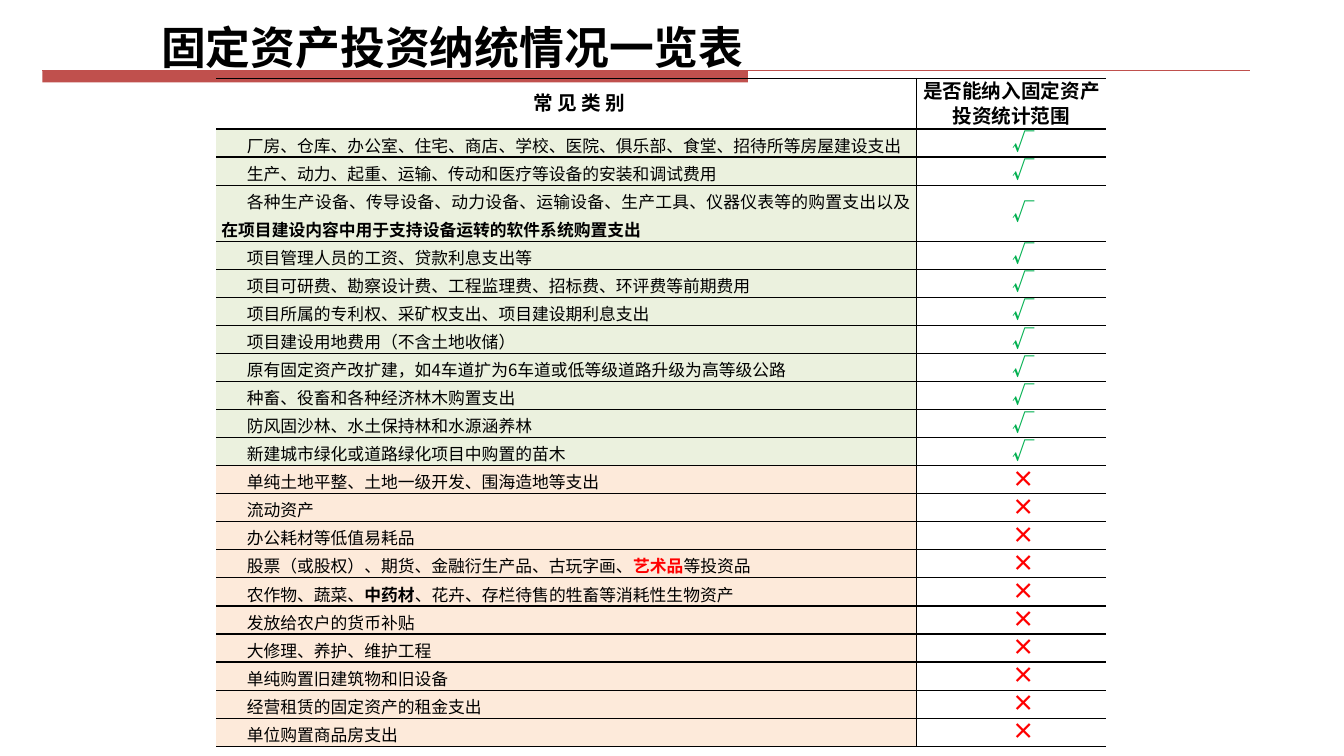
from pptx import Presentation
from pptx.dml.color import RGBColor
from pptx.enum.shapes import MSO_CONNECTOR, MSO_SHAPE
from pptx.enum.text import MSO_ANCHOR, PP_ALIGN
from pptx.util import Cm, Pt
from lxml.etree import SubElement
from pptx.oxml.ns import qn

FACE = "Noto Sans CJK SC"
BLACK = RGBColor(0x00, 0x00, 0x00)
BRICK = RGBColor(0xC0, 0x50, 0x4D)
GREEN = RGBColor(0x00, 0xB0, 0x50)
RED = RGBColor(0xFF, 0x00, 0x00)
LEAF = RGBColor(0xEB, 0xF1, 0xDE)
PEACH = RGBColor(0xFD, 0xEA, 0xDA)

YES = [
    ["厂房、仓库、办公室、住宅、商店、学校、医院、俱乐部、食堂、招待所等房屋建设支出"],
    ["生产、动力、起重、运输、传动和医疗等设备的安装和调试费用"],
    ["各种生产设备、传导设备、动力设备、运输设备、生产工具、仪器仪表等的购置支出以及",
     "在项目建设内容中用于支持设备运转的软件系统购置支出"],
    ["项目管理人员的工资、贷款利息支出等"],
    ["项目可研费、勘察设计费、工程监理费、招标费、环评费等前期费用"],
    ["项目所属的专利权、采矿权支出、项目建设期利息支出"],
    ["项目建设用地费用（不含土地收储）"],
    ["原有固定资产改扩建，如4车道扩为6车道或低等级道路升级为高等级公路"],
    ["种畜、役畜和各种经济林木购置支出"],
    ["防风固沙林、水土保持林和水源涵养林"],
    ["新建城市绿化或道路绿化项目中购置的苗木"],
]
NO = [
    ["单纯土地平整、土地一级开发、围海造地等支出"],
    ["流动资产"],
    ["办公耗材等低值易耗品"],
    ["股票（或股权）、期货、金融衍生产品、古玩字画、", "艺术品", "等投资品"],
    ["农作物、蔬菜、", "中药材", "、花卉、存栏待售的牲畜等消耗性生物资产"],
    ["发放给农户的货币补贴"],
    ["大修理、养护、维护工程"],
    ["单纯购置旧建筑物和旧设备"],
    ["经营租赁的固定资产的租金支出"],
    ["单位购置商品房支出"],
]


def write(para, parts, size, color, bold):
    font = para.font
    font.size, font.name = Pt(size), FACE
    font.color.rgb = color
    if len(parts) == 1:
        font.bold = bold
    SubElement(para._p.pPr.find(qn("a:defRPr")), qn("a:ea"), typeface=FACE)
    for i, part in enumerate(parts):
        run = para.add_run()
        run.text = part
        if len(parts) > 1:
            run.font.bold = i == 1
        if part == "艺术品":
            run.font.color.rgb = RED


def fill_cell(cell, parts, size, color, bold, align, space, indent, tint):
    cell.margin_left = cell.margin_right = Cm(0.13)
    cell.margin_top = cell.margin_bottom = 0
    props = cell._tc.get_or_add_tcPr()
    for side in ("lnL", "lnR", "lnT", "lnB"):
        edge = SubElement(props, qn("a:" + side), w=str(Pt(1)))
        if side == ("lnR" if align == PP_ALIGN.CENTER and not indent else ""):
            SubElement(edge, qn("a:noFill"))
        elif side == outer:
            SubElement(edge, qn("a:noFill"))
        else:
            ink = SubElement(edge, qn("a:solidFill"))
            SubElement(ink, qn("a:srgbClr"), val=str(BLACK))
    if tint:
        cell.fill.solid()
        cell.fill.fore_color.rgb = tint
    else:
        cell.fill.background()
    para = cell.text_frame.paragraphs[0]
    para.alignment = align
    para.line_spacing = Pt(space)
    if indent:
        para._p.get_or_add_pPr().set("indent", str(Cm(0.64)))
    write(para, parts, size, color, bold)


prs = Presentation()
prs.slide_width, prs.slide_height = Cm(33.87), Cm(19.05)
slide = prs.slides.add_slide(prs.slide_layouts[6])
shapes = slide.shapes

bar = shapes.add_shape(MSO_SHAPE.RECTANGLE, Cm(1.07), Cm(1.78), Cm(17.78), Cm(0.3))
bar.shadow.inherit = False
bar.fill.solid()
bar.fill.fore_color.rgb = BRICK
bar.line.fill.background()
rule = shapes.add_connector(MSO_CONNECTOR.STRAIGHT, Cm(1.07), Cm(1.78), Cm(31.5), Cm(1.78))
rule.line.color.rgb = BRICK
rule.line.width = Pt(0.75)
SubElement(rule._element.spPr, qn("a:effectLst"))

title = shapes.add_textbox(Cm(3.81), Cm(0.36), Cm(22.28), Cm(1.63)).text_frame
title.word_wrap = True
title.vertical_anchor = MSO_ANCHOR.MIDDLE
write(title.paragraphs[0], ["固定资产投资纳统情况一览表"], 32, BLACK, True)

rows = [(parts, "√", GREEN, LEAF) for parts in YES]
rows += [(parts, "×", RED, PEACH) for parts in NO]
frame = shapes.add_table(len(rows) + 1, 2, Cm(5.45), Cm(1.98), Cm(22.43), Cm(16.8))
table = frame.table
table.first_row = table.horz_banding = False
table.columns[0].width, table.columns[1].width = Cm(17.65), Cm(4.78)
for row in table.rows:
    row.height = Cm(0.7)
table.rows[0].height = Cm(1.27)
table.rows[3].height = Cm(1.41)

mid, just = PP_ALIGN.CENTER, PP_ALIGN.JUSTIFY
outer = "lnL"
fill_cell(table.cell(0, 0), ["常 见 类 别"], 14, BLACK, True, mid, 18, True, None)
for i, (parts, mark, color, tint) in enumerate(rows, 1):
    fill_cell(table.cell(i, 0), parts, 12, BLACK, False, just, 20, True, tint)
outer = "lnR"
fill_cell(table.cell(0, 1), ["是否能纳入固定资产投资统计范围"], 14, BLACK, True, mid, 18, False, None)
for i, (parts, mark, color, tint) in enumerate(rows, 1):
    fill_cell(table.cell(i, 1), [mark], 16, color, True, mid, 20, True, None)
for i in range(len(rows) + 1):
    table.cell(i, 1).vertical_anchor = MSO_ANCHOR.MIDDLE
table.cell(0, 0).vertical_anchor = MSO_ANCHOR.MIDDLE

prs.save("out.pptx")
